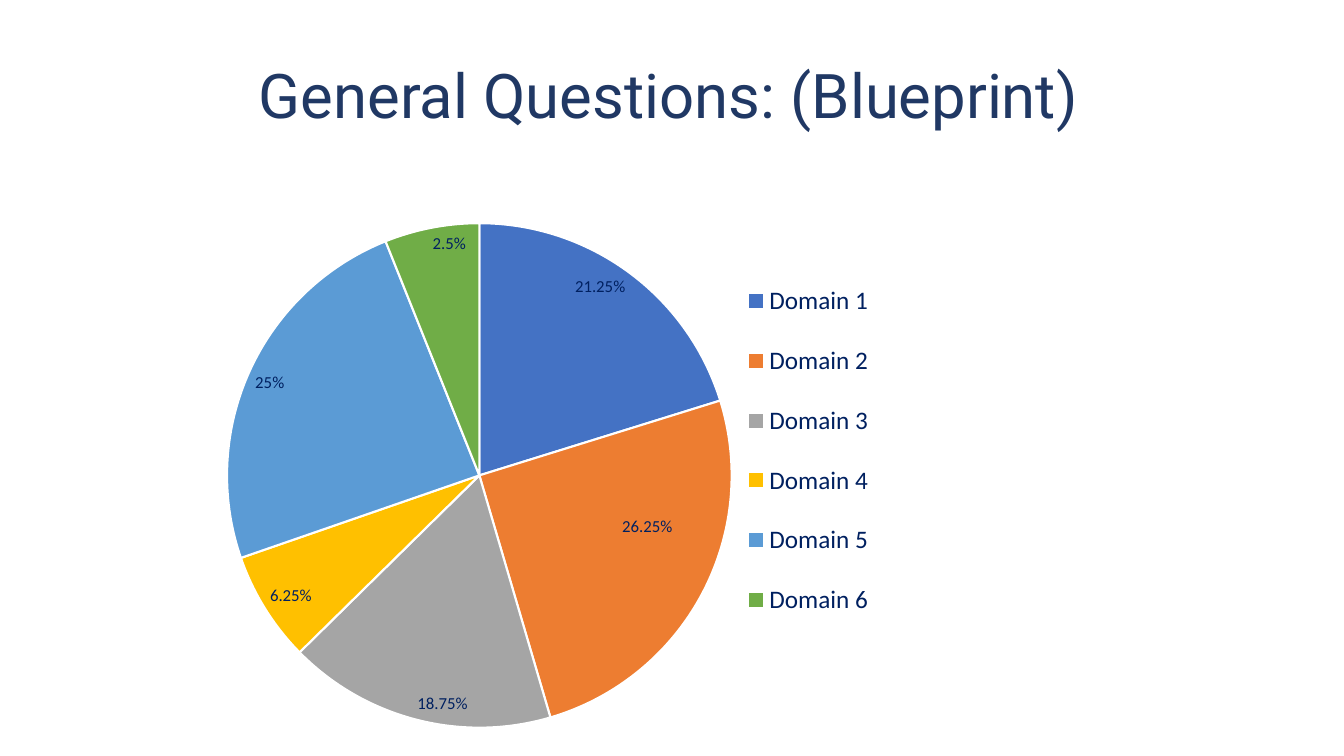
from lxml import etree
from pptx import Presentation
from pptx.chart.data import CategoryChartData
from pptx.dml.color import RGBColor
from pptx.enum.chart import XL_CHART_TYPE, XL_LABEL_POSITION, XL_LEGEND_POSITION
from pptx.enum.text import MSO_ANCHOR
from pptx.oxml.ns import qn
from pptx.util import Inches, Pt

PIE = XL_CHART_TYPE.PIE
INSIDE_END = XL_LABEL_POSITION.INSIDE_END
LEGEND_RIGHT = XL_LEGEND_POSITION.RIGHT
MIDDLE = MSO_ANCHOR.MIDDLE

COLORS = {"title": "203864", "label": "002060", "border": "FFFFFF"}
DOMAINS = [
    ("Domain 1", 20, "21.25%", "4472C4"),
    ("Domain 2", 25, "26.25%", "ED7D31"),
    ("Domain 3", 17, "18.75%", "A5A5A5"),
    ("Domain 4", 7, "6.25%", "FFC000"),
    ("Domain 5", 24, "25%", "5B9BD5"),
    ("Domain 6", 6, "2.5%", "70AD47"),
]


def set_font(font, name, size, color):
    font.name = name
    font.size = Pt(size)
    font.bold = False
    font.color.rgb = RGBColor.from_string(color)


def place(parent, index, **settings):
    """Insert a manual chart layout as the child of parent at index."""
    for old in parent.findall(qn("c:layout")):
        parent.remove(old)
    layout = etree.Element(qn("c:layout"))
    manual = etree.SubElement(layout, qn("c:manualLayout"))
    for tag, value in settings.items():
        etree.SubElement(manual, qn(f"c:{tag}")).set("val", str(value))
    parent.insert(index, layout)


prs = Presentation()
prs.slide_width = Inches(13.33)
prs.slide_height = Inches(7.5)
slide = prs.slides.add_slide(prs.slide_layouts[6])

# Title
title = slide.shapes.add_textbox(Inches(2.47), Inches(0.55), Inches(10.86), Inches(0.85))
title_frame = title.text_frame
title_frame.word_wrap = True
title_frame.vertical_anchor = MIDDLE
title_frame.text = "General Questions: (Blueprint)"
heading = title_frame.paragraphs[0]
heading.line_spacing = 0.9
set_font(heading.runs[0].font, "Roboto", 44, COLORS["title"])

# Blueprint pie
blueprint = CategoryChartData()
blueprint.categories = [domain for domain, *_ in DOMAINS]
blueprint.add_series("Series 1", [value for _, value, *_ in DOMAINS])
chart = slide.shapes.add_chart(
    PIE, Inches(1.69), Inches(1.83), Inches(7.96), Inches(5.5), blueprint
).chart
chart.has_title = False
set_font(chart.font, "Calibri", 10, "000000")

pie = chart.plots[0]
pie.vary_by_categories = True
for index, (_, _, share, color) in enumerate(DOMAINS):
    point = pie.series[0].points[index]
    point.format.fill.solid()
    point.format.fill.fore_color.rgb = RGBColor.from_string(color)
    point.format.line.color.rgb = RGBColor.from_string(COLORS["border"])
    point.format.line.width = Pt(1.5)
    label = point.data_label
    label.text_frame.text = share
    set_font(label.text_frame.paragraphs[0].runs[0].font, "Calibri", 12, COLORS["label"])
    label.position = INSIDE_END

# Legend
chart.has_legend = True
chart.legend.position = LEGEND_RIGHT
chart.legend.include_in_layout = False
set_font(chart.legend.font, "Calibri", 18, COLORS["label"])

# Places as shares of the chart; the Domain 2 label is an offset
chart_space = chart._chartSpace
plot_area = chart_space.xpath(".//c:plotArea")[0]
legend = chart_space.xpath(".//c:legend")[0]
domain_2_label = chart_space.xpath(".//c:dLbl[c:idx/@val='1']")[0]
place(plot_area, 0, layoutTarget="inner", xMode="edge", yMode="edge",
      x=0.07, y=0.07, w=0.63, h=0.91)
place(legend, 1, xMode="edge", yMode="edge", x=0.71, y=0.13, w=0.17, h=0.7)
place(domain_2_label, 1, x=-0.03, y=-0.1)

prs.save("out.pptx")
